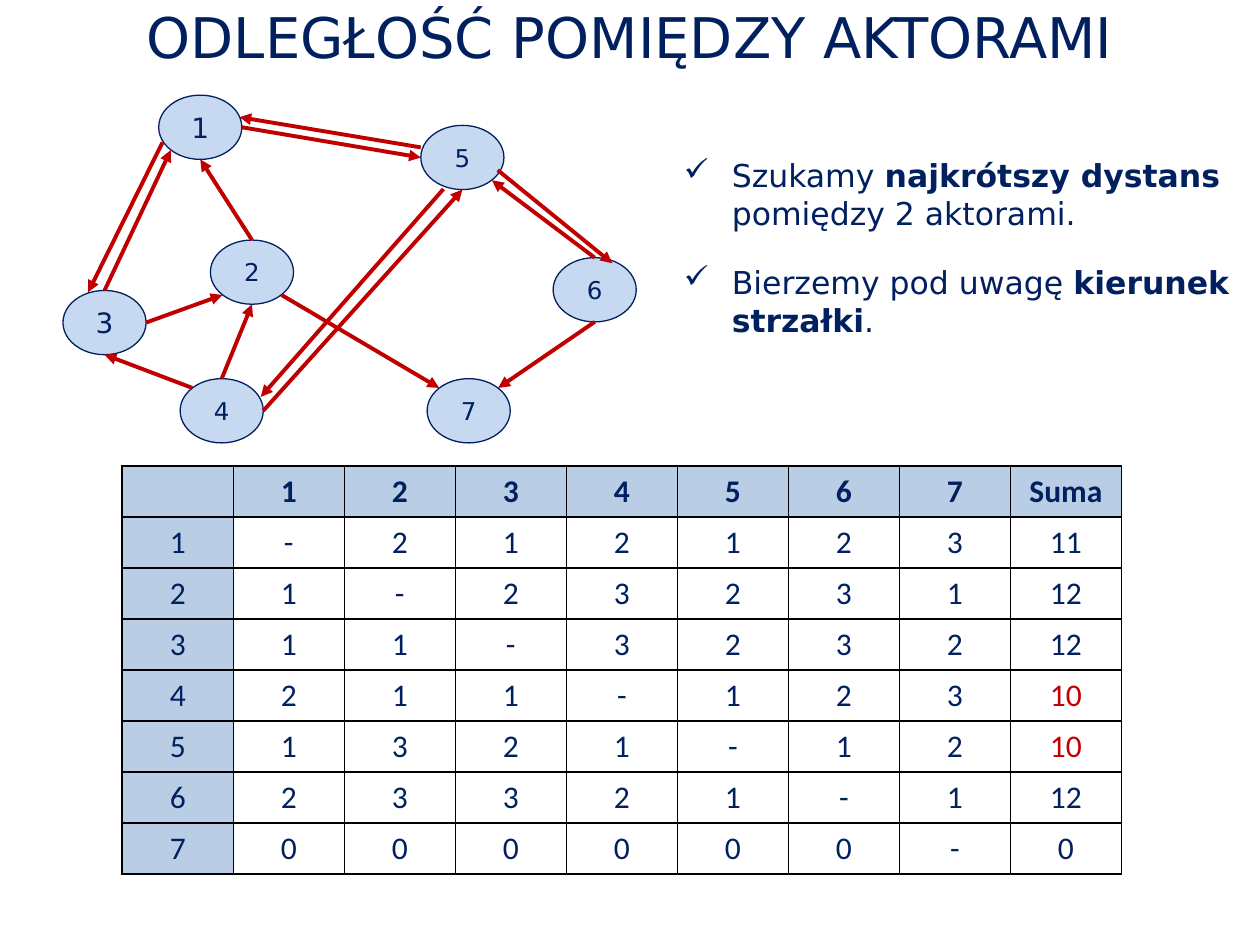
from pptx import Presentation
from pptx.dml.color import RGBColor
from pptx.enum.shapes import MSO_CONNECTOR, MSO_SHAPE
from pptx.enum.text import MSO_ANCHOR, PP_ALIGN
from pptx.oxml.ns import qn
from pptx.util import Inches, Pt
from lxml.etree import SubElement

NAVY, RED, SKY, HEAD, WHITE = "002060", "C00000", "C6D9F1", "B9CDE5", "FFFFFF"
SANS = "DejaVu Sans"

TITLE = "ODLEGŁOŚĆ POMIĘDZY AKTORAMI"
NOTES = [  # runs: text, bold
    [("Szukamy ", False), ("najkrótszy dystans", True), (" pomiędzy 2 aktorami.", False)],
    [("Bierzemy pod uwagę ", False), ("kierunek strzałki", True), (".", False)],
]
NODE_W, NODE_H = 0.66, 0.51
NODES = {  # centre x, centre y, text size
    1: (1.59, 1.01, 16), 2: (2, 2.16, 14), 3: (0.83, 2.56, 16), 4: (1.76, 3.26, 14),
    5: (3.67, 1.25, 14), 6: (4.72, 2.3, 14), 7: (3.72, 3.26, 14),
}
DIAG = 0.71
SIDES = {
    "n": (0, -1), "s": (0, 1), "w": (-1, 0), "e": (1, 0),
    "nw": (-DIAG, -DIAG), "ne": (DIAG, -DIAG), "sw": (-DIAG, DIAG), "se": (DIAG, DIAG),
}
LINKS = [  # node and side, to node and side
    (1, "e", 5, "w"), (2, "n", 1, "s"), (3, "n", 1, "sw"), (3, "e", 2, "sw"),
    (4, "n", 2, "s"), (4, "nw", 3, "s"), (2, "se", 7, "nw"), (4, "e", 5, "s"),
    (6, "s", 7, "ne"), (6, "n", 5, "se"),
]
RETURNS = [  # second arrow of a two-way pair, beside the first
    ((3.34, 1.17), (1.9, 0.93)), ((3.95, 1.35), (4.86, 2.09)),
    ((3.52, 1.5), (2.07, 3.15)), ((1.29, 1.13), (0.7, 2.32)),
]
ROWS = [
    ["", "1", "2", "3", "4", "5", "6", "7", "Suma"],
    ["1", "-", "2", "1", "2", "1", "2", "3", "11"],
    ["2", "1", "-", "2", "3", "2", "3", "1", "12"],
    ["3", "1", "1", "-", "3", "2", "3", "2", "12"],
    ["4", "2", "1", "1", "-", "1", "2", "3", "10"],
    ["5", "1", "3", "2", "1", "-", "1", "2", "10"],
    ["6", "2", "3", "3", "2", "1", "-", "1", "12"],
    ["7", "0", "0", "0", "0", "0", "0", "-", "0"],
]
BEST = "10"


def rgb(code):
    return RGBColor.from_string(code)


def paint(item, code):
    item.fill.solid()
    item.fill.fore_color.rgb = rgb(code)


def style(run, size, face=SANS, code=NAVY, bold=False):
    font = run.font
    font.size, font.name, font.bold = Pt(size), face, bold
    font.color.rgb = rgb(code)


def center(frame, text, size, **look):
    frame.text = text
    para = frame.paragraphs[0]
    para.alignment = PP_ALIGN.CENTER
    for run in para.runs:
        style(run, size, **look)


def add_box(slide, *area):
    frame = slide.shapes.add_textbox(*map(Inches, area)).text_frame
    frame.word_wrap = True
    return frame


def add_node(slide, name, x, y, size):
    area = (x - NODE_W / 2, y - NODE_H / 2, NODE_W, NODE_H)
    node = slide.shapes.add_shape(MSO_SHAPE.OVAL, *map(Inches, area))
    node.shadow.inherit = False
    paint(node, SKY)
    node.line.color.rgb = rgb(NAVY)
    node.line.width = Pt(0.75)
    node.text_frame.vertical_anchor = MSO_ANCHOR.MIDDLE
    center(node.text_frame, str(name), size)


def edge(name, side):
    """Point on the rim of a node."""
    x, y, _ = NODES[name]
    dx, dy = SIDES[side]
    return x + dx * NODE_W / 2, y + dy * NODE_H / 2


def add_arrow(slide, start, end):
    line = slide.shapes.add_connector(MSO_CONNECTOR.STRAIGHT, *map(Inches, start + end))
    line.line.color.rgb = rgb(RED)
    line.line.width = Pt(2.25)
    props = line._element.spPr
    SubElement(props.find(qn("a:ln")), qn("a:tailEnd"), type="triangle")
    SubElement(props, qn("a:effectLst"))


def add_border(cell):
    props = cell._tc.get_or_add_tcPr()
    for side in ("lnL", "lnR", "lnT", "lnB"):
        line = SubElement(props, qn("a:" + side), w=str(Pt(1)))
        SubElement(SubElement(line, qn("a:solidFill")), qn("a:srgbClr"), val="000000")


def add_grid(slide):
    area = map(Inches, (0.97, 3.7, 7.93, 3.24))
    table = slide.shapes.add_table(len(ROWS), len(ROWS[0]), *area).table
    table.horz_banding = table.first_row = False
    for r, row in enumerate(ROWS):
        for c, text in enumerate(row):
            cell = table.cell(r, c)
            add_border(cell)
            paint(cell, HEAD if r == 0 or c == 0 else WHITE)
            cell.vertical_anchor = MSO_ANCHOR.MIDDLE
            code = RED if text == BEST else NAVY
            center(cell.text_frame, text, 18, face="Calibri", code=code, bold=r == 0)


def add_notes(slide):
    frame = add_box(slide, 5.33, 1.19, 4.55, 1.57)
    for i, runs in enumerate(NOTES):
        para = frame.add_paragraph() if i else frame.paragraphs[0]
        props = para._p.get_or_add_pPr()
        props.set("marL", str(Inches(0.38)))
        props.set("indent", str(-Inches(0.38)))
        SubElement(props, qn("a:buChar"), char="✓")
        if i:
            para.space_before = Pt(18)
        for text, bold in runs:
            run = para.add_run()
            run.text = text
            style(run, 18, bold=bold)


def main():
    deck = Presentation()
    deck.slide_width, deck.slide_height = Inches(10), Inches(7.5)
    slide = deck.slides.add_slide(deck.slide_layouts[6])
    title = add_box(slide, 0.5, -0.34, 9, 1.25)
    title.vertical_anchor = MSO_ANCHOR.MIDDLE
    center(title, TITLE, 32)
    for name, place in NODES.items():
        add_node(slide, name, *place)
    for a, out, b, into in LINKS:
        add_arrow(slide, edge(a, out), edge(b, into))
    for start, end in RETURNS:
        add_arrow(slide, start, end)
    add_grid(slide)
    add_notes(slide)
    deck.save("out.pptx")


if __name__ == "__main__":
    main()
